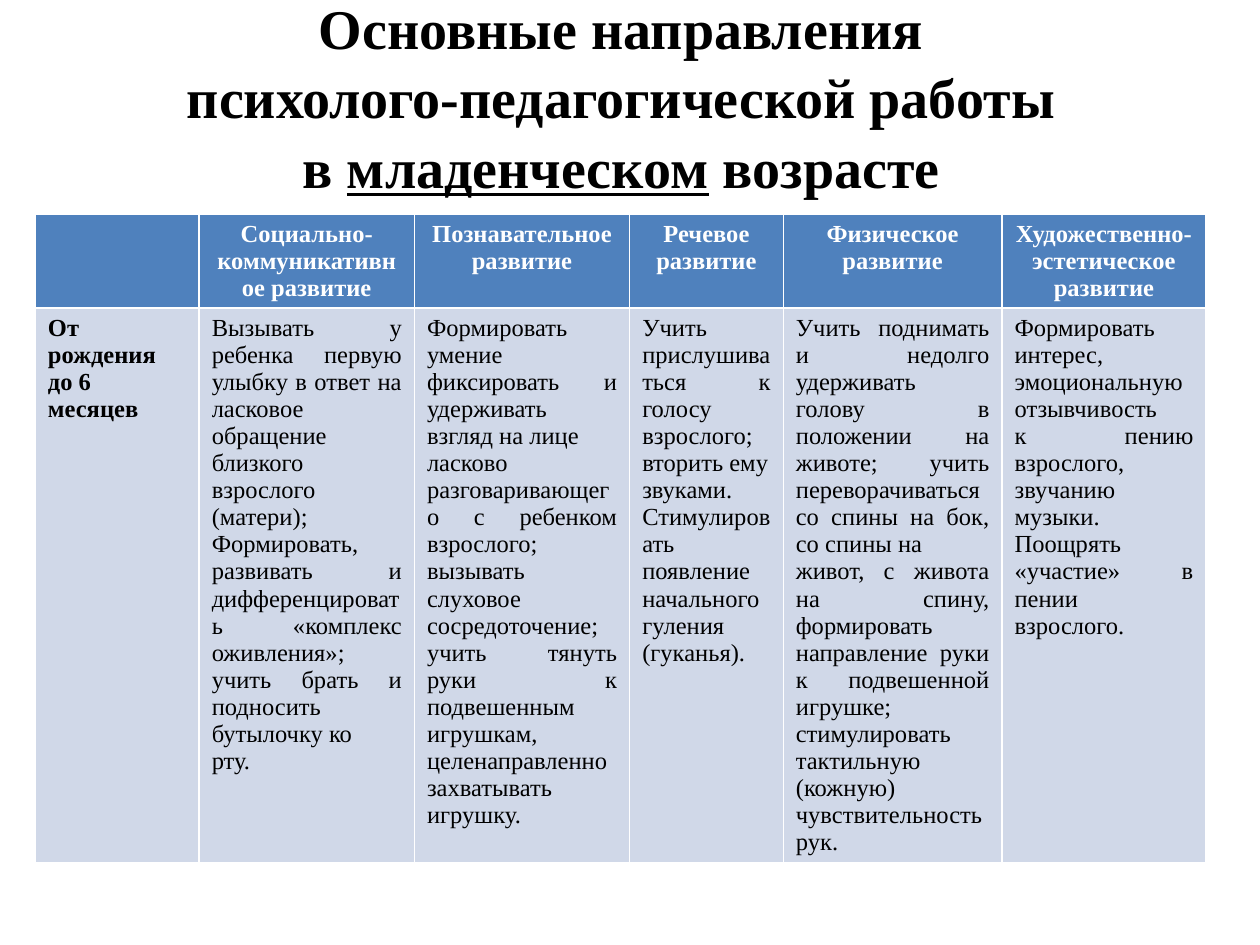
from dataclasses import dataclass

from pptx import Presentation
from pptx.dml.color import RGBColor
from pptx.enum.text import MSO_ANCHOR, MSO_AUTO_SIZE, PP_ALIGN
from pptx.util import Pt

LEFT, CENTER, JUSTIFY = PP_ALIGN.LEFT, PP_ALIGN.CENTER, PP_ALIGN.JUSTIFY
MIDDLE = MSO_ANCHOR.MIDDLE
NO_AUTOFIT = MSO_AUTO_SIZE.NONE
TITLE_ONLY = 5


@dataclass(frozen=True)
class Theme:
    font: str = "Times New Roman"
    title_size: int = 32
    table_size: int = 14
    text: RGBColor = RGBColor(0x00, 0x00, 0x00)
    header_text: RGBColor = RGBColor(0xFF, 0xFF, 0xFF)
    header_fill: RGBColor = RGBColor(0x4F, 0x81, 0xBD)
    body_fill: RGBColor = RGBColor(0xD0, 0xD8, 0xE8)


@dataclass(frozen=True)
class Area:
    """One column of the table: a direction of development and its tasks."""
    width: float
    heading: str
    tasks: tuple[str, ...]
    align: PP_ALIGN = JUSTIFY
    bold: bool = False


THEME = Theme()
HEADER_HEIGHT, BODY_HEIGHT = 53, 317

AREAS = (
    Area(93.6, "", ("От рождения до 6 месяцев",), LEFT, True),
    Area(123, "Социально-коммуникативное развитие", (
        "Вызывать у ребенка первую улыбку в ответ на ласковое",
        "обращение близкого взрослого (матери);",
        "Формировать, развивать и дифференцировать «комплекс оживления»; "
        "учить брать и подносить бутылочку ко",
        "рту.",
    )),
    Area(123, "Познавательное развитие", (
        "Формировать умение фиксировать и удерживать взгляд на лице",
        "ласково разговаривающего с ребенком взрослого;",
        "вызывать слуховое сосредоточение; учить тянуть руки к подвешенным "
        "игрушкам, целенаправленно захватывать игрушку.",
    )),
    Area(87.8, "Речевое развитие", (
        "Учить прислушиваться к голосу взрослого; вторить ему",
        "звуками. Стимулировать появление начального гуления (гуканья).",
    )),
    Area(125, "Физическое развитие", (
        "Учить поднимать и недолго удерживать голову в положении на животе; "
        "учить переворачиваться со спины на бок, со спины на",
        "живот, с живота на спину, формировать направление руки к подвешенной "
        "игрушке; стимулировать тактильную (кожную) чувствительность рук.",
    )),
    Area(116.6, "Художественно-эстетическое развитие", (
        "Формировать интерес, эмоциональную отзывчивость",
        "к пению взрослого, звучанию музыки. Поощрять «участие» в пении "
        "взрослого.",
    )),
)


def style_paragraph(paragraph, size: float, color: RGBColor,
                    align: PP_ALIGN, bold: bool) -> None:
    paragraph.alignment = align
    font = paragraph.font
    font.name, font.size, font.bold = THEME.font, Pt(size), bold
    font.color.rgb = color


def fill_cell(cell, lines: tuple[str, ...], fill: RGBColor, color: RGBColor,
              align: PP_ALIGN, bold: bool) -> None:
    cell.fill.solid()
    cell.fill.fore_color.rgb = fill
    cell.text_frame.text = "\n".join(lines)
    for paragraph in cell.text_frame.paragraphs:
        style_paragraph(paragraph, THEME.table_size, color, align, bold)


def add_title(slide) -> None:
    title = slide.shapes.title
    title.left, title.top, title.width, title.height = (
        Pt(31), Pt(9.4), Pt(648), Pt(90))
    frame = title.text_frame
    frame.auto_size = NO_AUTOFIT
    frame.vertical_anchor = MIDDLE
    heading = frame.paragraphs[0]
    style_paragraph(heading, THEME.title_size, THEME.text, CENTER, True)
    heading.line_spacing = 1.04
    for line in ("Основные направления", "психолого-педагогической работы"):
        heading.add_run().text = line
        heading.add_line_break()
    for words, underlined in (("в ", False), ("младенческом", True),
                              (" возрасте", False)):
        run = heading.add_run()
        run.text = words
        run.font.underline = underlined


def add_areas_table(slide) -> None:
    table = slide.shapes.add_table(
        2, len(AREAS), Pt(20.2), Pt(122.4),
        Pt(sum(area.width for area in AREAS)),
        Pt(HEADER_HEIGHT + BODY_HEIGHT)).table
    for row, height in zip(table.rows, (HEADER_HEIGHT, BODY_HEIGHT)):
        row.height = Pt(height)
    for index, area in enumerate(AREAS):
        table.columns[index].width = Pt(area.width)
        fill_cell(table.cell(0, index), (area.heading,), THEME.header_fill,
                  THEME.header_text, CENTER, True)
        fill_cell(table.cell(1, index), area.tasks, THEME.body_fill,
                  THEME.text, area.align, area.bold)


def main() -> None:
    presentation = Presentation()
    presentation.slide_width, presentation.slide_height = Pt(720), Pt(540)
    slide = presentation.slides.add_slide(
        presentation.slide_layouts[TITLE_ONLY])
    add_title(slide)
    add_areas_table(slide)
    presentation.save("out.pptx")


if __name__ == "__main__":
    main()
